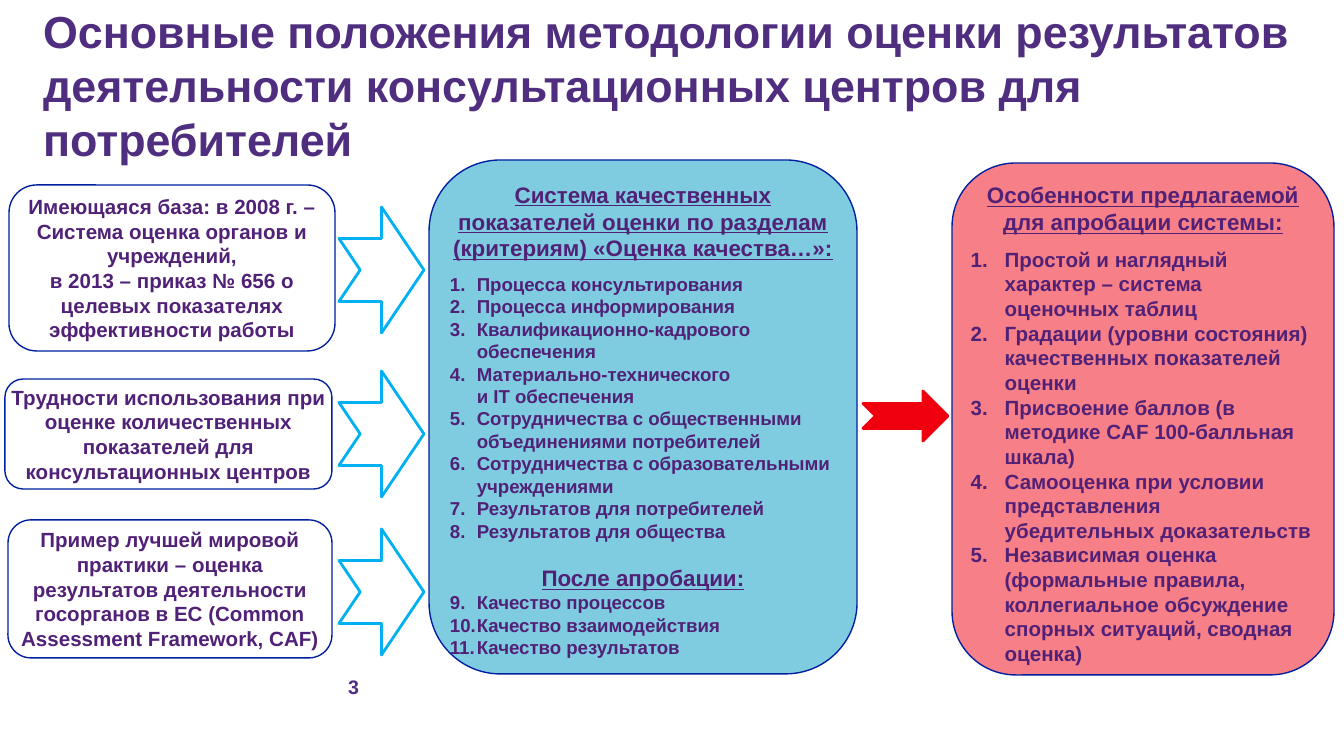
from dataclasses import dataclass

from lxml.etree import SubElement
from pptx import Presentation
from pptx.dml.color import RGBColor
from pptx.enum.shapes import MSO_SHAPE
from pptx.enum.text import MSO_ANCHOR, PP_ALIGN
from pptx.oxml.ns import qn
from pptx.util import Pt

PX = 914400 / 134.4


@dataclass(frozen=True)
class Theme:
    font: str = "Arial"
    title: str = "4F2D7F"
    body: str = "512177"
    border: str = "00209F"
    flow: str = "00B0F0"
    result: str = "F0000F"
    criteria: str = "009AC5"
    features: str = "F00010"
    title_size: float = 24
    heading_size: float = 12
    text_size: float = 11
    list_size: float = 10
    number_size: float = 10.5


THEME = Theme()

TITLE = ("Основные положения методологии оценки результатов деятельности "
         "консультационных центров для потребителей")
SOURCES = [
    ((9, 185, 326, 166),
     ["Имеющаяся база: в 2008 г. – Система оценка органов и учреждений,",
      "в 2013 – приказ № 656 о целевых показателях эффективности работы"]),
    ((5, 379, 327, 110),
     ["Трудности использования при оценке количественных показателей для "
      "консультационных центров"]),
    ((8, 520, 324, 138),
     ["Пример лучшей мировой практики – оценка результатов деятельности "
      "госорганов в ЕС (Common Assessment Framework, CAF)"]),
]
FLOW_TOPS = (207, 371, 529)
CRITERIA = [
    "Процесса консультирования",
    "Процесса информирования",
    "Квалификационно-кадрового обеспечения",
    "Материально-технического\vи IT обеспечения",
    "Сотрудничества с общественными объединениями потребителей",
    "Сотрудничества с образовательными учреждениями",
    "Результатов для потребителей",
    "Результатов для общества",
]
AFTER_TRIAL = ["Качество процессов", "Качество взаимодействия", "Качество результатов"]
FEATURES = [
    "Простой и наглядный характер – система оценочных таблиц",
    "Градации (уровни состояния) качественных показателей оценки",
    "Присвоение баллов (в методике CAF 100-балльная шкала)",
    "Самооценка при условии представления убедительных доказательств",
    "Независимая оценка (формальные правила, коллегиальное обсуждение "
    "спорных ситуаций, сводная оценка)",
]


def px(*lengths):
    return [round(length * PX) for length in lengths]


def prepare_frame(frame, anchor=MSO_ANCHOR.TOP):
    frame.word_wrap = True
    frame.vertical_anchor = anchor
    frame.margin_left = frame.margin_top = frame.margin_right = frame.margin_bottom = 0
    return frame


def number_paragraph(paragraph, indent, start):
    properties = paragraph._p.get_or_add_pPr()
    hang, = px(indent)
    properties.set("marL", str(hang))
    properties.set("indent", str(-hang))
    numbering = SubElement(properties, qn("a:buAutoNum"), type="arabicPeriod")
    if start > 1:
        numbering.set("startAt", str(start))


def write(frame, text, *, size, color=THEME.body, align=PP_ALIGN.LEFT,
          underline=False, before=0, after=0, indent=0, start=0):
    """Add a paragraph, using the frame's first one while it is empty.

    A start of 1 or more numbers the paragraph in a list that begins there.
    """
    first = frame.paragraphs[0]
    paragraph = frame.add_paragraph() if first.text else first
    paragraph.text = text
    paragraph.alignment = align
    if before:
        paragraph.space_before = Pt(before)
    if after:
        paragraph.space_after = Pt(after)
    if start:
        number_paragraph(paragraph, indent, start)
    for run in paragraph.runs:
        run.font.name = THEME.font
        run.font.size = Pt(size)
        run.font.bold = True
        run.font.underline = underline
        run.font.color.rgb = RGBColor.from_string(color)


def write_heading(frame, text, **spacing):
    write(frame, text, size=THEME.heading_size, align=PP_ALIGN.CENTER,
          underline=True, **spacing)


def write_list(frame, items, *, size, indent, start=1):
    for item in items:
        write(frame, item, size=size, indent=indent, start=start)


def add_label(slide, bounds, text, anchor=MSO_ANCHOR.TOP, **text_format):
    label = slide.shapes.add_textbox(*px(*bounds))
    write(prepare_frame(label.text_frame, anchor), text,
          color=THEME.title, **text_format)


def add_outlined(slide, kind, bounds, *, line, width, fill=None, opacity=100):
    shape = slide.shapes.add_shape(kind, *px(*bounds))
    shape.shadow.inherit = False
    shape.line.color.rgb = RGBColor.from_string(line)
    shape.line.width = Pt(width)
    if fill is None:
        shape.fill.background()
        return shape
    shape.fill.solid()
    shape.fill.fore_color.rgb = RGBColor.from_string(fill)
    if opacity < 100:
        color = shape._element.spPr.find(qn("a:solidFill"))[0]
        SubElement(color, qn("a:alpha"), val=str(opacity * 1000))
    return shape


def add_panel(slide, bounds, anchor=MSO_ANCHOR.TOP, fill=None):
    """Add a rounded box and return its text frame."""
    panel = add_outlined(slide, MSO_SHAPE.ROUNDED_RECTANGLE, bounds,
                         line=THEME.border, width=0.75, fill=fill, opacity=50)
    return prepare_frame(panel.text_frame, anchor)


def add_arrow(slide, bounds, color, fill=None):
    add_outlined(slide, MSO_SHAPE.NOTCHED_RIGHT_ARROW, bounds,
                 line=color, width=1.5, fill=fill)


def add_criteria(slide):
    frame = add_panel(slide, (429, 160, 428, 514), fill=THEME.criteria)
    list_format = {"size": THEME.list_size, "indent": 27}
    write_heading(frame, "Система качественных показателей оценки по разделам "
                         "(критериям) «Оценка качества…»:", after=6)
    write_list(frame, CRITERIA, **list_format)
    write_heading(frame, "После апробации:", before=12)
    write_list(frame, AFTER_TRIAL, start=len(CRITERIA) + 1, **list_format)


def add_features(slide):
    frame = add_panel(slide, (952, 163, 382, 512), fill=THEME.features)
    write_heading(frame, "Особенности предлагаемой для апробации системы:", after=6)
    write_list(frame, FEATURES, size=THEME.text_size, indent=34)


def main():
    deck = Presentation()
    deck.slide_width, deck.slide_height = px(1344, 756)
    slide = deck.slides.add_slide(deck.slide_layouts[6])

    add_label(slide, (267, 668, 173, 38), "3", MSO_ANCHOR.MIDDLE,
              size=THEME.number_size, align=PP_ALIGN.CENTER)
    add_label(slide, (43, 4, 1249, 113), TITLE, size=THEME.title_size)
    add_criteria(slide)
    for bounds, paragraphs in SOURCES:
        frame = add_panel(slide, bounds, MSO_ANCHOR.MIDDLE)
        for text in paragraphs:
            write(frame, text, size=THEME.text_size, align=PP_ALIGN.CENTER)
    for top in FLOW_TOPS:
        add_arrow(slide, (339, top, 85, 126), THEME.flow)
    add_features(slide)
    add_arrow(slide, (863, 391, 85, 50), THEME.result, fill=THEME.result)

    deck.save("out.pptx")


if __name__ == "__main__":
    main()
